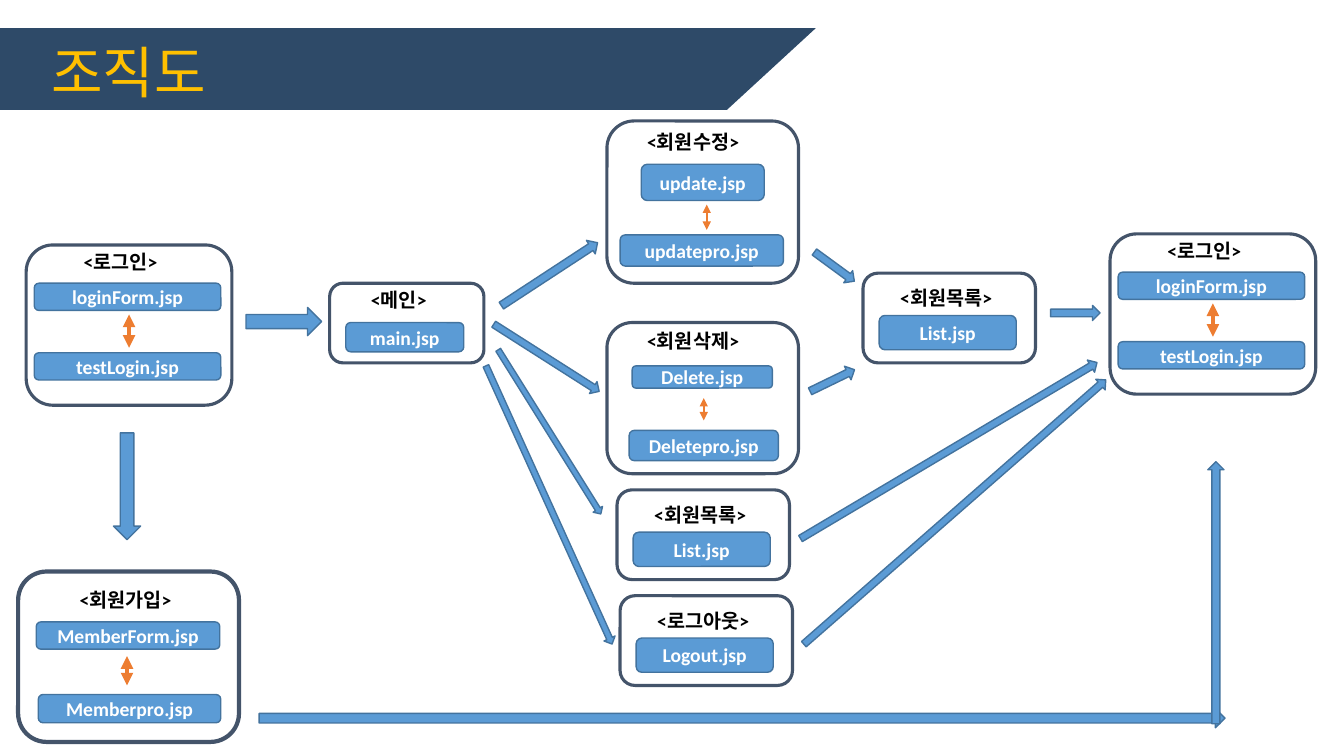
"""Draw the page flow of a member site as one slide."""
from lxml.etree import SubElement
from pptx import Presentation
from pptx.dml.color import RGBColor
from pptx.enum.shapes import MSO_CONNECTOR, MSO_SHAPE
from pptx.enum.text import MSO_ANCHOR, PP_ALIGN
from pptx.oxml.ns import qn
from pptx.util import Pt

PX = 9144
WIDE, HIGH = 1333, 750

NAVY = RGBColor(0x2E, 0x4A, 0x68)
GOLD = RGBColor(0xFF, 0xC0, 0x00)
BLUE = RGBColor(0x5B, 0x9B, 0xD5)
EDGE = RGBColor(0x43, 0x73, 0x9E)
SLATE = RGBColor(0x44, 0x54, 0x6A)
ORANGE = RGBColor(0xED, 0x7D, 0x31)
BLACK = RGBColor(0, 0, 0)
WHITE = RGBColor(0xFF, 0xFF, 0xFF)

TITLE = "조직도"
BANNER = [(0, 28), (809, 28), (721, 109), (0, 109)]

# Every place inside a frame is measured from the frame's top left corner.
LOGIN = {
    "size": (204, 159), "edge": 2.25, "label": ("<로그인>", 47, 0, 185),
    "pages": [("loginForm.jsp", 8, 38, 185, 27), ("testLogin.jsp", 8, 107, 185, 27)],
    "link": (102, 69, 102, 3),
}
JOIN = {
    "size": (219, 169), "edge": 3, "label": ("<회원가입>", 51, 11, 208),
    "pages": [("MemberForm.jsp", 18, 50, 182, 27), ("Memberpro.jsp", 20, 122, 181, 28)],
    "link": (108, 84, 113, 3),
}
MAIN = {
    "size": (153, 79), "edge": 2.25, "label": ("<메인>", 31, 0, 129),
    "pages": [("main.jsp", 16, 39, 117, 29)],
}
UPDATE = {
    "size": (190, 161), "edge": 2.25, "label": ("<회원수정>", 30, 4, 221),
    "pages": [("update.jsp", 34, 43, 122, 36), ("updatepro.jsp", 13, 113, 162, 31)],
    "link": (99, 83, 108, 1.5),
}
DELETE = {
    "size": (190, 150), "edge": 2.25, "label": ("<회원삭제>", 30, 1, 221),
    "pages": [("Delete.jsp", 25, 43, 139, 22), ("Deletepro.jsp", 22, 107, 148, 30)],
    "link": (96, 75, 97, 1.5),
}
LIST = {
    "size": (171, 89), "edge": 2.25, "label": ("<회원목록>", 27, 8, 221),
    "pages": [("List.jsp", 16, 42, 136, 34)],
}
LOGOUT = {**LIST, "label": ("<로그아웃>", 27, 8, 221),
          "pages": [("Logout.jsp", 16, 42, 136, 34)]}

FRAMES = [
    (LOGIN, 26, 243), (JOIN, 18, 567), (MAIN, 327, 281), (UPDATE, 602, 120),
    (DELETE, 602, 320), (LIST, 612, 486), (LOGOUT, 615, 591),
    (LIST, 856, 271), (LOGIN, 1101, 232),
]

ARROWS = [
    (244, 305, 75, 28, 0), (488, 264, 114, 16, 326.8), (449, 423, 192, 11, 58),
    (393, 495, 303, 12, 65.6), (480, 348, 124, 14, 32.5), (73, 469, 106, 27, 90),
    (257, 703, 958, 19, 0), (1076, 580, 260, 16, 270), (803, 257, 49, 15, 36.2),
    (801, 370, 49, 15, 334.1), (1042, 303, 49, 15, 0),
    (770, 440, 342, 14, 329.3), (748, 501, 398, 14, 318.8),
]


def scale(*spans):
    return [span * PX for span in spans]


def paint(shape, fill, line=None, weight=1):
    shape.shadow.inherit = False
    if fill is None:
        shape.fill.background()
    else:
        shape.fill.solid()
        shape.fill.fore_color.rgb = fill
    if line is None:
        shape.line.fill.background()
    else:
        shape.line.color.rgb = line
        shape.line.width = Pt(weight)


def write(shape, text, color, size=14, face="Calibri", bold=True):
    frame = shape.text_frame
    frame.word_wrap = True
    run = frame.paragraphs[0].add_run()
    run.text = text
    run.font.name = face
    run.font.size = Pt(size)
    run.font.bold = bold
    run.font.color.rgb = color
    return frame


def add_title(shapes):
    path = shapes.build_freeform(*BANNER[0], scale=PX)
    path.add_line_segments(BANNER[1:], close=True)
    paint(path.convert_to_shape(), NAVY)
    box = shapes.add_textbox(*scale(0, 34, 717, 74))
    frame = write(box, TITLE, GOLD, 40, "Arial Narrow", False)
    frame.vertical_anchor = MSO_ANCHOR.MIDDLE
    frame.margin_left = 51 * PX
    frame.margin_top = frame.margin_right = frame.margin_bottom = 0


def add_page(shapes, text, *place):
    page = shapes.add_shape(MSO_SHAPE.ROUNDED_RECTANGLE, *scale(*place))
    paint(page, BLUE, EDGE)
    frame = write(page, text, WHITE)
    frame.vertical_anchor = MSO_ANCHOR.MIDDLE
    frame.paragraphs[0].alignment = PP_ALIGN.CENTER


def add_link(shapes, x, top, end, weight):
    link = shapes.add_connector(MSO_CONNECTOR.STRAIGHT, *scale(x, top, x, end))
    link.line.color.rgb = ORANGE
    link.line.width = Pt(weight)
    line = link.line._get_or_add_ln()
    for tag in ("a:headEnd", "a:tailEnd"):
        SubElement(line, qn(tag), type="triangle")
    SubElement(link._element.spPr, qn("a:effectLst"))


def add_frame(shapes, kind, left, top):
    for text, x, y, *size in kind["pages"]:
        add_page(shapes, text, left + x, top + y, *size)
    box = shapes.add_shape(MSO_SHAPE.ROUNDED_RECTANGLE,
                           *scale(left, top, *kind["size"]))
    paint(box, None, SLATE, kind["edge"])
    text, x, y, width = kind["label"]
    label = shapes.add_textbox(*scale(left + x, top + y, width, 34))
    write(label, text, BLACK)
    if "link" in kind:
        x, start, end, weight = kind["link"]
        add_link(shapes, left + x, top + start, top + end, weight)


def add_arrow(shapes, *place, turn):
    arrow = shapes.add_shape(MSO_SHAPE.RIGHT_ARROW, *scale(*place))
    paint(arrow, BLUE, EDGE)
    arrow.rotation = turn


def main():
    deck = Presentation()
    deck.slide_width, deck.slide_height = scale(WIDE, HIGH)
    shapes = deck.slides.add_slide(deck.slide_layouts[6]).shapes
    add_title(shapes)
    for frame in FRAMES:
        add_frame(shapes, *frame)
    for *place, turn in ARROWS:
        add_arrow(shapes, *place, turn=turn)
    deck.save("out.pptx")


if __name__ == "__main__":
    main()
